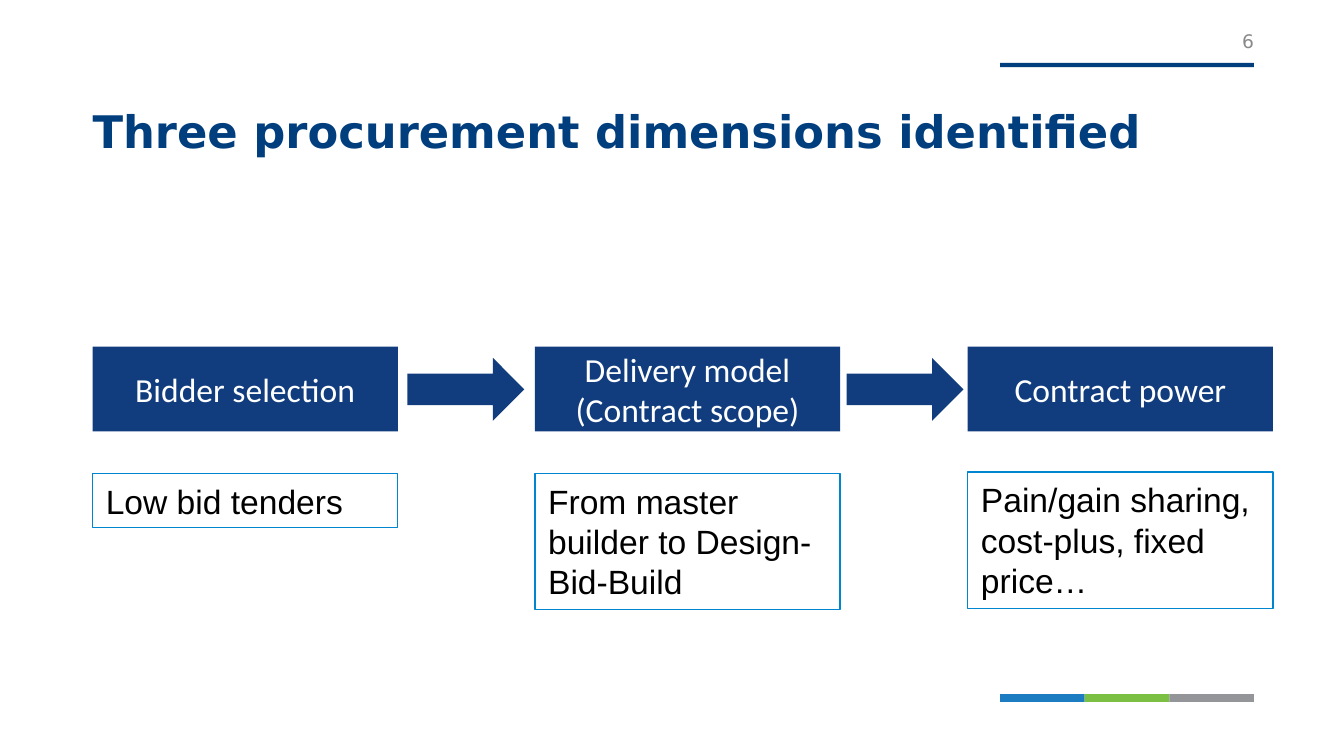
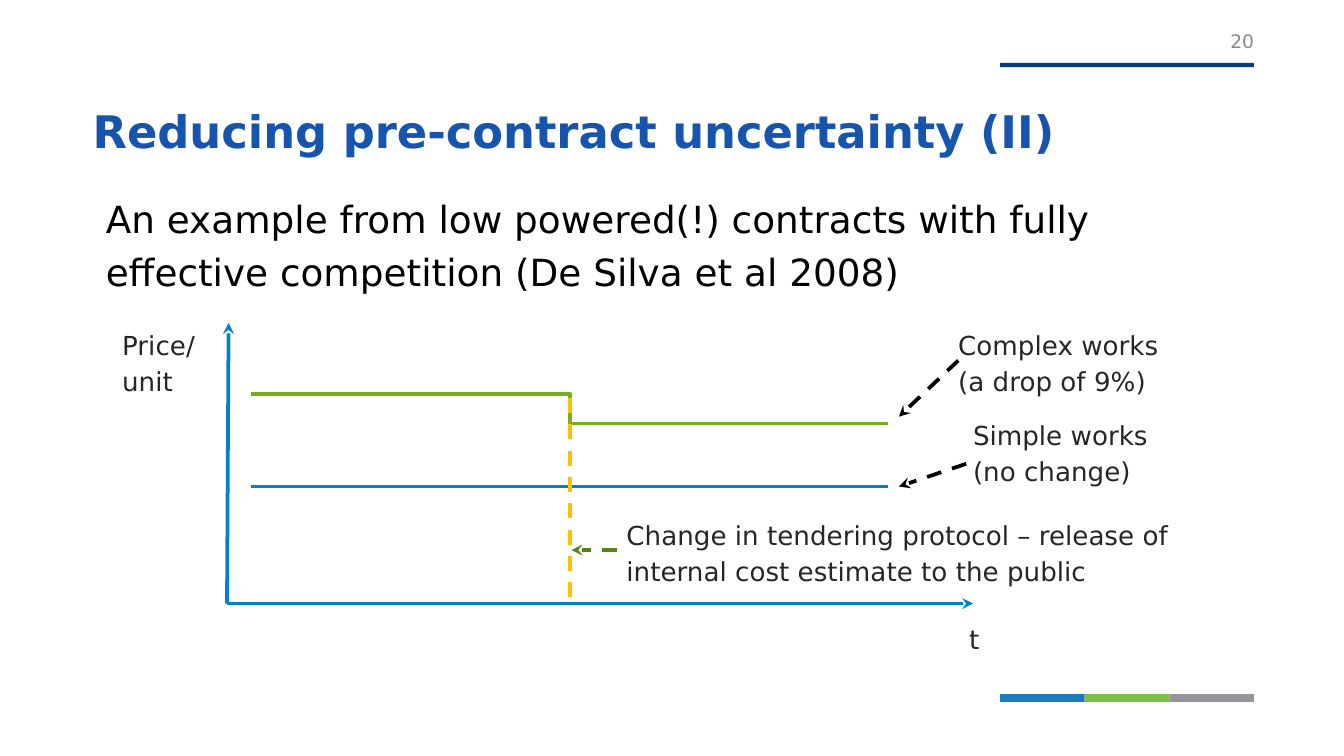
from dataclasses import dataclass

import pptx
import pptx.dml.color
import pptx.enum.dml
import pptx.enum.shapes
import pptx.enum.text
import pptx.oxml
import pptx.oxml.ns
import pptx.presentation
import pptx.shapes.autoshape
import pptx.slide
import pptx.util

Cm = pptx.util.Cm
Pt = pptx.util.Pt
SHAPE = pptx.enum.shapes.MSO_SHAPE
CONNECTOR = pptx.enum.shapes.MSO_CONNECTOR
ANCHOR = pptx.enum.text.MSO_ANCHOR
ALIGN = pptx.enum.text.PP_ALIGN
FIT = pptx.enum.text.MSO_AUTO_SIZE

COLOURS = {
    "navy": "003E7E",
    "box": "113D7E",
    "title_blue": "1754AD",
    "band_blue": "1C7CC2",
    "band_green": "7BC042",
    "band_grey": "939598",
    "number": "898989",
    "outline": "0085D0",
    "axis": "0082CB",
    "complex": "74AE1D",
    "protocol": "588319",
    "divider": "FFC000",
    "label": "262626",
    "black": "000000",
    "white": "FFFFFF",
}
SANS = "DejaVu Sans"
LEFT = 1.75
BAND_LEFT, BAND_WIDTH = 18.9, 4.8
NO_MARGINS = (0, 0, 0, 0)
BOX_MARGINS = (0.25, 0.13, 0.25, 0.13)


@dataclass(frozen=True)
class Area:
    left: float
    top: float
    width: float
    height: float

    def lengths(self) -> list[pptx.util.Cm]:
        return [Cm(value) for value in (self.left, self.top, self.width, self.height)]


@dataclass(frozen=True)
class TextStyle:
    size: float
    colour: str
    font: str = SANS
    bold: bool = False
    align: ALIGN = ALIGN.LEFT
    anchor: ANCHOR = ANCHOR.MIDDLE
    margins: tuple = NO_MARGINS
    spacing: float = 1.0


@dataclass(frozen=True)
class Dimension:
    left: float
    heading: str
    example: str
    example_top: float
    example_height: float


@dataclass(frozen=True)
class Label:
    text: str
    area: Area
    align: ALIGN = ALIGN.LEFT


@dataclass(frozen=True)
class Stroke:
    start: tuple[float, float]
    end: tuple[float, float]
    colour: str
    kind: CONNECTOR = CONNECTOR.STRAIGHT
    dashed: bool = False
    arrow: bool = False


NUMBER = TextStyle(10, "number", align=ALIGN.RIGHT, anchor=ANCHOR.BOTTOM)
HEADING = TextStyle(18, "white", "Calibri", align=ALIGN.CENTER, margins=BOX_MARGINS)
EXAMPLE = TextStyle(18, "black", "Arial", anchor=ANCHOR.TOP, margins=BOX_MARGINS)
BODY = TextStyle(20, "black", anchor=ANCHOR.TOP, margins=(0.25, 0.2, 0, 0), spacing=1.2)

DIMENSIONS = [
    Dimension(LEFT, "Bidder selection", "Low bid tenders", 8.95, 1.02),
    Dimension(10.11, "Delivery model (Contract scope)",
              "From master builder to Design-Bid-Build", 8.95, 2.57),
    Dimension(18.29, "Contract power",
              "Pain/gain sharing, cost-plus, fixed price…", 8.92, 2.57),
]
ARROW_LEFTS = [7.7, 16.0]

ORIGIN = (4.29, 11.4)
PLOT_LEFT, PLOT_RIGHT = 4.75, 16.79
CHANGE_X = (PLOT_LEFT + PLOT_RIGHT) / 2
COMPLEX_BEFORE, COMPLEX_AFTER, SIMPLE_PRICE = 7.44, 8.0, 9.19

STROKES = [
    Stroke(ORIGIN, (4.32, 6.1), "axis", arrow=True),
    Stroke(ORIGIN, (18.39, 11.4), "axis", arrow=True),
    Stroke((PLOT_LEFT, SIMPLE_PRICE), (PLOT_RIGHT, SIMPLE_PRICE), "axis"),
    Stroke((PLOT_LEFT, COMPLEX_BEFORE), (PLOT_RIGHT, COMPLEX_AFTER), "complex",
           kind=CONNECTOR.ELBOW),
    Stroke((11.66, 10.39), (10.8, 10.39), "protocol", dashed=True, arrow=True),
    Stroke((CHANGE_X, 11.28), (CHANGE_X, COMPLEX_BEFORE), "divider", dashed=True),
    Stroke((18.11, 6.81), (16.99, 7.87), "black", dashed=True, arrow=True),
    Stroke((18.26, 8.76), (16.99, SIMPLE_PRICE), "black", dashed=True, arrow=True),
]
LABELS = [
    Label("t", Area(17.63, 11.63, 1.57, 0.81), ALIGN.CENTER),
    Label("Price/\nunit", Area(2.31, 6.1, 1.65, 1.42)),
    Label("Change in tendering protocol – release of internal cost estimate to the public",
          Area(11.84, 9.7, 10.62, 1.42)),
    Label("Complex works\n(a drop of 9%)", Area(18.11, 6.1, 4.09, 1.42)),
    Label("Simple works\v(no change)", Area(18.39, 7.8, 3.91, 1.42)),
]


def rgb(name: str) -> pptx.dml.color.RGBColor:
    return pptx.dml.color.RGBColor.from_string(COLOURS[name])


def write(shape: pptx.shapes.autoshape.Shape, text: str, style: TextStyle) -> None:
    frame = shape.text_frame
    frame.text = text
    frame.word_wrap = True
    frame.auto_size = FIT.NONE
    frame.vertical_anchor = style.anchor
    (frame.margin_left, frame.margin_top,
     frame.margin_right, frame.margin_bottom) = [Cm(margin) for margin in style.margins]
    for paragraph in frame.paragraphs:
        paragraph.alignment = style.align
        paragraph.line_spacing = style.spacing
        paragraph.font.name = style.font
        paragraph.font.size = Pt(style.size)
        paragraph.font.bold = style.bold
        paragraph.font.color.rgb = rgb(style.colour)


def add_text(slide: pptx.slide.Slide, area: Area, text: str, style: TextStyle) -> None:
    write(slide.shapes.add_textbox(*area.lengths()), text, style)


def add_block(slide: pptx.slide.Slide, area: Area, fill: str | None,
              outline: str | None = None,
              preset: SHAPE = SHAPE.RECTANGLE) -> pptx.shapes.autoshape.Shape:
    block = slide.shapes.add_shape(preset, *area.lengths())
    block.shadow.inherit = False
    if fill:
        block.fill.solid()
        block.fill.fore_color.rgb = rgb(fill)
    else:
        block.fill.background()
    if outline:
        block.line.color.rgb = rgb(outline)
        block.line.width = Pt(0.75)
    else:
        block.line.fill.background()
    return block


def add_stroke(slide: pptx.slide.Slide, stroke: Stroke) -> None:
    ends = [Cm(value) for value in stroke.start + stroke.end]
    connector = slide.shapes.add_connector(stroke.kind, *ends)
    connector.line.color.rgb = rgb(stroke.colour)
    connector.line.width = Pt(2)
    if stroke.dashed:
        connector.line.dash_style = pptx.enum.dml.MSO_LINE.DASH
    if stroke.arrow:
        tail = pptx.oxml.parse_xml(
            f'<a:tailEnd {pptx.oxml.ns.nsdecls("a")} type="stealth"/>')
        connector.line._get_or_add_ln().append(tail)
    connector._element.spPr.append(
        pptx.oxml.parse_xml(f'<a:effectLst {pptx.oxml.ns.nsdecls("a")}/>'))


def add_titled_slide(deck: pptx.presentation.Presentation, title: str, colour: str,
                     width: float, number: int) -> pptx.slide.Slide:
    slide = deck.slides.add_slide(deck.slide_layouts[5])
    heading = slide.shapes.title
    heading.left, heading.top, heading.width, heading.height = Area(
        LEFT, 1.9, width, 1.27).lengths()
    write(heading, title, TextStyle(24, colour, bold=True, anchor=ANCHOR.BOTTOM,
                                    margins=(0, 0, 0, 0.2)))
    add_block(slide, Area(BAND_LEFT, 1.19, BAND_WIDTH, 0.08), "navy")
    bands = ["band_blue", "band_green", "band_grey"]
    band_width = BAND_WIDTH / len(bands)
    for index, band in enumerate(bands):
        add_block(slide, Area(BAND_LEFT + index * band_width, 13.11, band_width, 0.15), band)
    add_text(slide, Area(22.45, 0.23, 1.25, 0.76), str(number), NUMBER)
    return slide


def build_dimensions(deck: pptx.presentation.Presentation) -> None:
    slide = add_titled_slide(deck, "Three procurement dimensions identified",
                             "navy", 23.55, 6)
    for dimension in DIMENSIONS:
        heading = add_block(slide, Area(dimension.left, 6.55, 5.77, 1.6), "box")
        write(heading, dimension.heading, HEADING)
        example = add_block(slide, Area(dimension.left, dimension.example_top, 5.77,
                                        dimension.example_height), None, "outline")
        write(example, dimension.example, EXAMPLE)
        example.text_frame.auto_size = FIT.SHAPE_TO_FIT_TEXT
    for left in ARROW_LEFTS:
        add_block(slide, Area(left, 6.76, 2.21, 1.19), "box", preset=SHAPE.RIGHT_ARROW)


def build_uncertainty(deck: pptx.presentation.Presentation) -> None:
    slide = add_titled_slide(deck, "Reducing pre-contract uncertainty (II)",
                             "title_blue", 21.97, 20)
    add_text(slide, Area(LEFT, 3.33, 21.97, 2.4),
             "An example from low powered(!) contracts with fully effective "
             "competition (De Silva et al 2008)", BODY)
    for label in LABELS:
        add_text(slide, label.area, label.text,
                 TextStyle(14, "label", align=label.align, spacing=1.15))
    for stroke in STROKES:
        add_stroke(slide, stroke)


def main() -> None:
    deck = pptx.Presentation()
    deck.slide_width, deck.slide_height = Cm(25.4), Cm(14.28)
    build_dimensions(deck)
    build_uncertainty(deck)
    deck.save("out.pptx")


if __name__ == "__main__":
    main()
